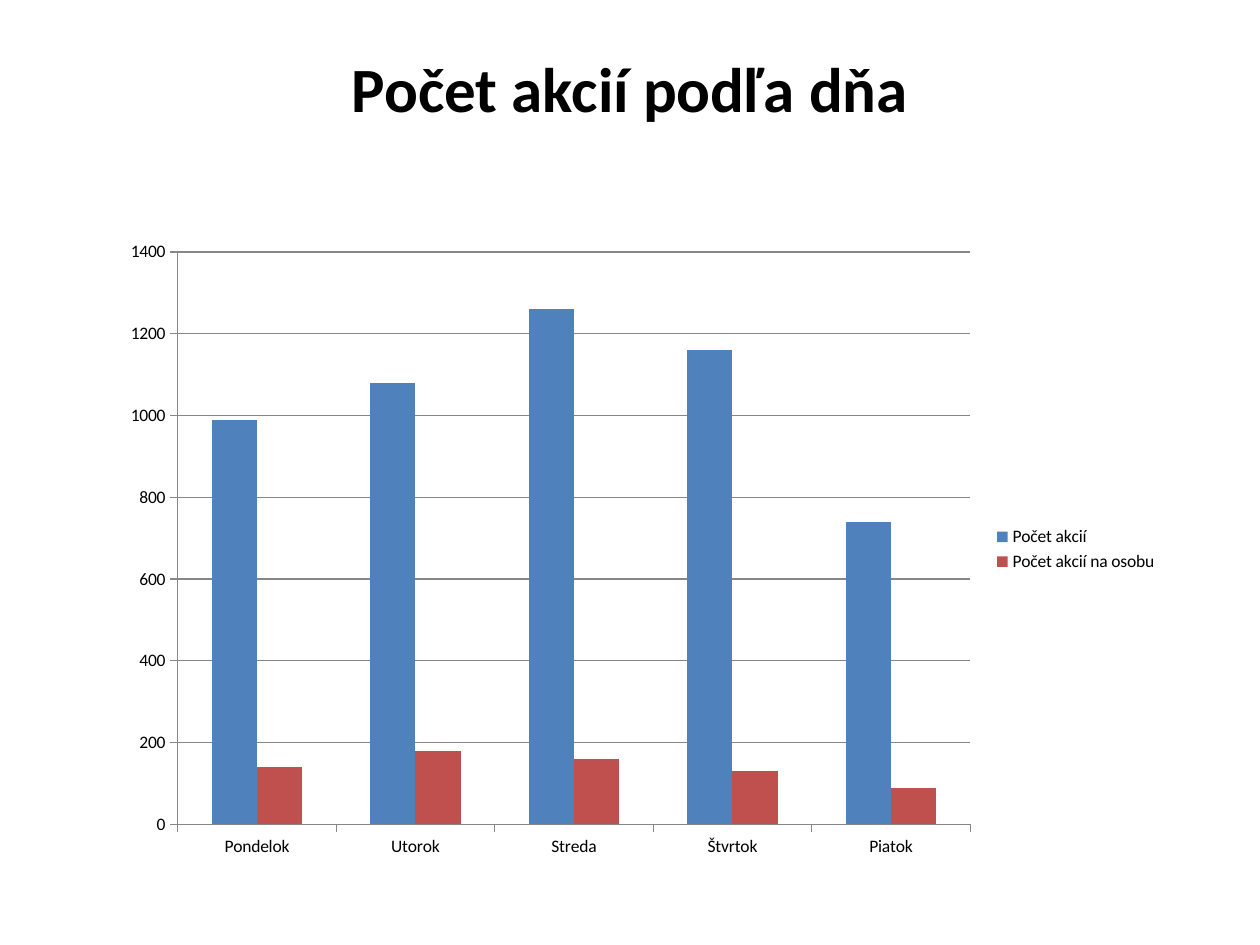
from dataclasses import dataclass

from pptx import Presentation
from pptx.chart.axis import _BaseAxis as Axis
from pptx.chart.chart import Chart
from pptx.chart.data import CategoryChartData
from pptx.dml.color import RGBColor
from pptx.enum.chart import XL_CHART_TYPE as ChartType
from pptx.enum.chart import XL_LEGEND_POSITION as LegendPosition
from pptx.enum.chart import XL_TICK_MARK as TickMark
from pptx.enum.text import MSO_ANCHOR as Anchor
from pptx.enum.text import MSO_AUTO_SIZE as AutoSize
from pptx.enum.text import PP_ALIGN as Align
from pptx.util import Pt

BLACK = RGBColor(0x00, 0x00, 0x00)
GRAY = RGBColor(0x86, 0x86, 0x86)
BLUE = RGBColor(0x4F, 0x81, 0xBD)
RED = RGBColor(0xC0, 0x50, 0x4D)
FONT = "Calibri"
TITLE_ONLY = 5


@dataclass
class Series:
    name: str
    values: tuple[int, ...]
    color: RGBColor


WEEKDAYS = ("Pondelok", "Utorok", "Streda", "Štvrtok", "Piatok")
SERIES = (
    Series("Počet akcií", (990, 1080, 1260, 1160, 740), BLUE),
    Series("Počet akcií na osobu", (140, 180, 160, 130, 90), RED),
)


def style_font(font, size: float, bold: bool = False) -> None:
    font.name, font.size, font.bold = FONT, Pt(size), bold
    font.color.rgb = BLACK


def style_axis(axis: Axis) -> None:
    axis.major_tick_mark = TickMark.OUTSIDE
    axis.minor_tick_mark = TickMark.NONE
    axis.format.line.color.rgb = GRAY
    axis.format.line.width = Pt(0.75)


def style_series(chart: Chart) -> None:
    plot = chart.plots[0]
    plot.vary_by_categories = False
    plot.gap_width = 150
    plot.overlap = 0
    for bars, series in zip(plot.series, SERIES):
        bars.format.fill.solid()
        bars.format.fill.fore_color.rgb = series.color


def main() -> None:
    prs = Presentation()
    prs.slide_width, prs.slide_height = Pt(720), Pt(540)
    slide = prs.slides.add_slide(prs.slide_layouts[TITLE_ONLY])

    # Title
    title = slide.shapes.title
    title.left, title.top, title.width, title.height = Pt(191.5), Pt(24.5), Pt(337), Pt(51)
    frame = title.text_frame
    frame.text = "Počet akcií podľa dňa"
    frame.word_wrap = False
    frame.auto_size = AutoSize.SHAPE_TO_FIT_TEXT
    frame.vertical_anchor = Anchor.TOP
    frame.paragraphs[0].alignment = Align.CENTER
    style_font(frame.paragraphs[0].runs[0].font, 36, bold=True)

    # Shares by weekday
    data = CategoryChartData()
    data.categories = WEEKDAYS
    for series in SERIES:
        data.add_series(series.name, series.values)
    chart = slide.shapes.add_chart(
        ChartType.COLUMN_CLUSTERED, Pt(62.6), Pt(131), Pt(606.2), Pt(365.8), data
    ).chart
    chart.has_title = False
    style_font(chart.font, 10)
    style_series(chart)

    # Axes and gridlines
    style_axis(chart.category_axis)
    amounts = chart.value_axis
    style_axis(amounts)
    amounts.minimum_scale, amounts.maximum_scale, amounts.major_unit = 0, 1400, 200
    amounts.has_major_gridlines = True
    amounts.major_gridlines.format.line.color.rgb = GRAY
    amounts.major_gridlines.format.line.width = Pt(0.75)

    # Legend
    chart.has_legend = True
    chart.legend.position = LegendPosition.RIGHT
    chart.legend.include_in_layout = False

    prs.save("out.pptx")


if __name__ == "__main__":
    main()
